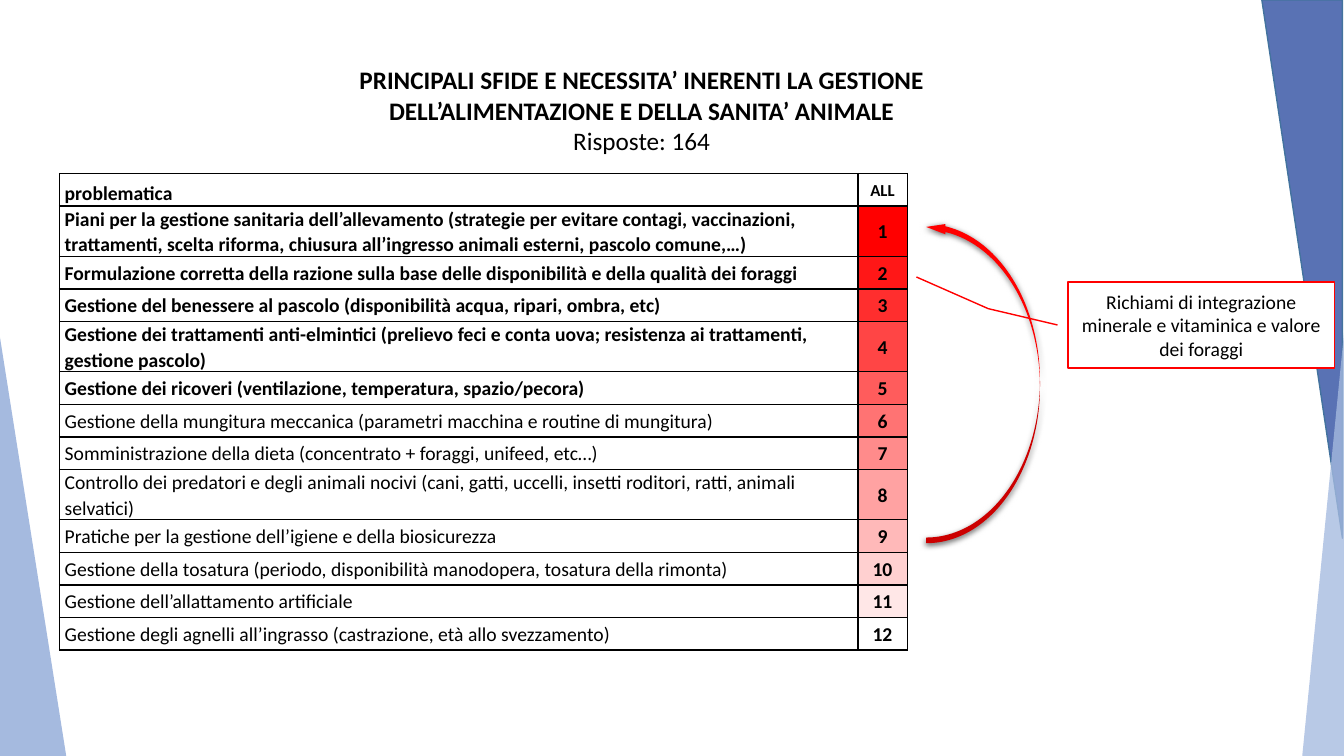
from dataclasses import dataclass

from lxml.etree import SubElement
from pptx import Presentation
from pptx.dml.color import RGBColor
from pptx.enum.shapes import MSO_SHAPE
from pptx.enum.text import MSO_ANCHOR, MSO_AUTO_SIZE, PP_ALIGN
from pptx.oxml.ns import qn
from pptx.util import Cm, Pt

COLOURS = {
    "black": "000000",
    "white": "FFFFFF",
    "red": "FF0000",
    "light blue": "A5BADF",
    "blue": "5972B4",
    "blue edge": "43739E",
}
TEXT_FORMAT = {"name": "Calibri", "size": Pt(14), "bold": False}


@dataclass(frozen=True)
class Figure:
    kind: MSO_SHAPE
    box: tuple[float, float, float, float]
    adjustments: tuple[float, ...]
    fill: str
    edge: str = ""
    rotation: int = 0
    flip: str = ""
    opacity: int = 100


@dataclass(frozen=True)
class Problem:
    text: str
    lines: int = 1


WEDGES = (
    Figure(MSO_SHAPE.ISOSCELES_TRIANGLE, (-0.03, 8.31, 1.7, 10.74), (0,), "light blue"),
    Figure(MSO_SHAPE.ISOSCELES_TRIANGLE, (31.8, 0, 2.03, 13.56), (0,), "blue",
           edge="blue edge", rotation=180),
    Figure(MSO_SHAPE.ISOSCELES_TRIANGLE, (32.82, 8.31, 1.06, 10.74), (0,), "light blue",
           flip="flipH", opacity=78),
)
RISE_ARROW = Figure(MSO_SHAPE.CURVED_LEFT_ARROW, (23.34, 5.59, 2.87, 8.1),
                    (0.05, 0.09, 0.17), "red", flip="flipV")
FORAGE_CALLOUT = Figure(MSO_SHAPE.LINE_CALLOUT_2, (26.92, 7.11, 6.71, 2.16),
                        (0.5, -0.04, 0.31, -0.3, -0.06, -0.57), "white", edge="red")

PROBLEMS = (
    Problem("Piani per la gestione sanitaria dell’allevamento (strategie per evitare contagi, "
            "vaccinazioni, trattamenti, scelta riforma, chiusura all’ingresso animali esterni, "
            "pascolo comune,…)", 2),
    Problem("Formulazione corretta della razione sulla base delle disponibilità e della "
            "qualità dei foraggi"),
    Problem("Gestione del benessere al pascolo (disponibilità acqua, ripari, ombra, etc)"),
    Problem("Gestione dei trattamenti anti-elmintici (prelievo feci e conta uova; resistenza "
            "ai trattamenti, gestione pascolo)", 2),
    Problem("Gestione dei ricoveri (ventilazione, temperatura, spazio/pecora)"),
    Problem("Gestione della mungitura meccanica (parametri macchina e routine di mungitura)"),
    Problem("Somministrazione della dieta (concentrato + foraggi, unifeed, etc…)"),
    Problem("Controllo dei predatori e degli animali nocivi (cani, gatti, uccelli, insetti "
            "roditori, ratti, animali selvatici)", 2),
    Problem("Pratiche per la gestione dell’igiene e della biosicurezza"),
    Problem("Gestione della tosatura (periodo, disponibilità manodopera, tosatura della rimonta)"),
    Problem("Gestione dell’allattamento artificiale"),
    Problem("Gestione degli agnelli all’ingrasso (castrazione, età allo svezzamento)"),
)
TOP_PRIORITIES = 5
ROW_HEIGHTS = {1: Cm(0.82), 2: Cm(1.27)}
COLUMN_WIDTHS = (Cm(20.12), Cm(1.24))


def rgb(name: str) -> RGBColor:
    return RGBColor.from_string(COLOURS[name])


def write(paragraph, text: str, align=PP_ALIGN.LEFT, spacing: float = 1.0, **changes) -> None:
    paragraph.text = text
    paragraph.alignment = align
    paragraph.line_spacing = spacing
    for attribute, value in {**TEXT_FORMAT, **changes}.items():
        setattr(paragraph.font, attribute, value)
    paragraph.font.color.rgb = rgb("black")


def draw_figure(slide, figure: Figure):
    shape = slide.shapes.add_shape(figure.kind, *map(Cm, figure.box))
    for index, value in enumerate(figure.adjustments):
        shape.adjustments[index] = value
    shape.rotation = figure.rotation
    shape.shadow.inherit = False
    shape.fill.solid()
    shape.fill.fore_color.rgb = rgb(figure.fill)
    if figure.opacity < 100:
        colour = shape.element.spPr.find(qn("a:solidFill"))[0]
        SubElement(colour, qn("a:alpha"), val=str(figure.opacity * 1000))
    if figure.edge:
        shape.line.color.rgb = rgb(figure.edge)
        shape.line.width = Pt(1)
    else:
        shape.line.fill.background()
    if figure.flip:
        shape.element.spPr.find(qn("a:xfrm")).set(figure.flip, "1")
    return shape


def add_soft_shadow(shape) -> None:
    effects = shape.element.spPr.find(qn("a:effectLst"))
    shadow = SubElement(effects, qn("a:outerShdw"), blurRad=str(Pt(4.5)), dist=str(Pt(1.5)),
                        dir="5400000", algn="ctr", rotWithShape="0")
    colour = SubElement(shadow, qn("a:srgbClr"), val=COLOURS["black"])
    SubElement(colour, qn("a:alpha"), val="63000")


def fill_cell(cell, text: str, fill: RGBColor | None = None,
              anchor=MSO_ANCHOR.MIDDLE, **changes) -> None:
    write(cell.text_frame.paragraphs[0], text, spacing=1.07, **changes)
    margins = {"margin_left": Cm(0.13), "margin_right": Cm(0.13),
               "margin_top": 0, "margin_bottom": 0, "vertical_anchor": anchor}
    for attribute, value in margins.items():
        setattr(cell, attribute, value)
    # Borders come before the fill in the cell properties
    properties = cell._tc.get_or_add_tcPr()
    for side in ("a:lnL", "a:lnR", "a:lnT", "a:lnB"):
        border = SubElement(properties, qn(side), w=str(Pt(1)))
        SubElement(SubElement(border, qn("a:solidFill")), qn("a:srgbClr"), val=COLOURS["black"])
    if fill is None:
        cell.fill.background()
    else:
        cell.fill.solid()
        cell.fill.fore_color.rgb = fill


def draw_ranking(slide) -> None:
    heights = [ROW_HEIGHTS[1], *(ROW_HEIGHTS[problem.lines] for problem in PROBLEMS)]
    ranking = slide.shapes.add_table(len(heights), 2, Cm(1.5), Cm(4.37),
                                     sum(COLUMN_WIDTHS), sum(heights)).table
    ranking.first_row = ranking.horz_banding = False
    for column, width in zip(ranking.columns, COLUMN_WIDTHS):
        column.width = width
    for row, height in zip(ranking.rows, heights):
        row.height = height
    fill_cell(ranking.cell(0, 0), "problematica", anchor=MSO_ANCHOR.BOTTOM, bold=True)
    fill_cell(ranking.cell(0, 1), "ALL", align=PP_ALIGN.CENTER, bold=True, size=Pt(12))
    for rank, problem in enumerate(PROBLEMS, start=1):
        # Red fades evenly to white from the first rank to the last
        tint = 255 * (rank - 1) // (len(PROBLEMS) - 1)
        fill_cell(ranking.cell(rank, 0), problem.text, bold=rank <= TOP_PRIORITIES)
        fill_cell(ranking.cell(rank, 1), str(rank), RGBColor(255, tint, tint),
                  align=PP_ALIGN.CENTER, bold=True)


def draw_title(slide) -> None:
    heading = slide.shapes.title
    heading.left, heading.top, heading.width, heading.height = map(Cm, (7.7, 1.5, 16.94, 2.57))
    frame = heading.text_frame
    frame.word_wrap = True
    frame.auto_size = MSO_AUTO_SIZE.SHAPE_TO_FIT_TEXT
    frame.vertical_anchor = MSO_ANCHOR.TOP
    write(frame.paragraphs[0], "PRINCIPALI SFIDE E NECESSITA’ INERENTI LA GESTIONE "
          "DELL’ALIMENTAZIONE E DELLA SANITA’ ANIMALE", PP_ALIGN.CENTER, size=Pt(18), bold=True)
    write(frame.add_paragraph(), "Risposte: 164", PP_ALIGN.CENTER, size=Pt(18))


def main() -> None:
    deck = Presentation()
    deck.slide_width, deck.slide_height = Cm(33.87), Cm(19.05)
    slide = deck.slides.add_slide(deck.slide_layouts[5])

    # Side wedges
    for wedge in WEDGES:
        draw_figure(slide, wedge)

    # Title and ranking of problems
    draw_title(slide)
    draw_ranking(slide)

    # Arrow from rank 9 up to rank 1
    add_soft_shadow(draw_figure(slide, RISE_ARROW))

    # Remark on rank 2
    remark = draw_figure(slide, FORAGE_CALLOUT).text_frame
    remark.word_wrap = True
    remark.vertical_anchor = MSO_ANCHOR.MIDDLE
    write(remark.paragraphs[0], "Richiami di integrazione minerale e vitaminica e valore "
          "dei foraggi", PP_ALIGN.CENTER)

    deck.save("out.pptx")


if __name__ == "__main__":
    main()
